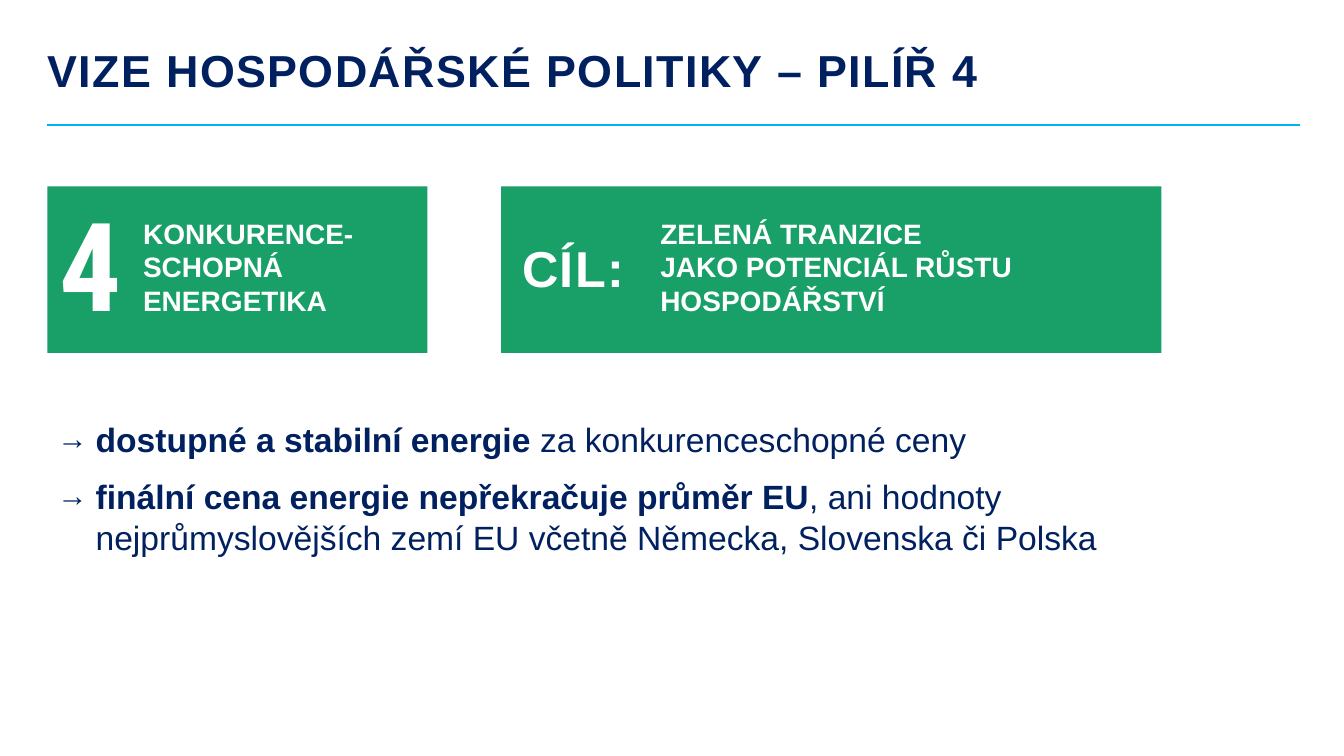
from lxml import etree
from pptx import Presentation
from pptx.dml.color import RGBColor
from pptx.enum.shapes import MSO_CONNECTOR, MSO_SHAPE
from pptx.enum.text import MSO_ANCHOR, MSO_AUTO_SIZE, PP_ALIGN
from pptx.oxml.ns import qn
from pptx.util import Inches, Pt

RECTANGLE, STRAIGHT = MSO_SHAPE.RECTANGLE, MSO_CONNECTOR.STRAIGHT
TOP, MIDDLE, LEFT = MSO_ANCHOR.TOP, MSO_ANCHOR.MIDDLE, PP_ALIGN.LEFT
GROW = MSO_AUTO_SIZE.SHAPE_TO_FIT_TEXT

COLORS = {"navy": "002060", "sky": "00B0F0", "green": "18A068", "white": "FFFFFF"}
WIDTH, HEIGHT = 13.33, 7.5
MARGIN = 0.47
PANEL_TOP, PANEL_HEIGHT = 1.85, 1.65

TITLE = {"size": 32, "color": "navy", "bold": True, "spacing": 1}
LABEL = {"size": 20, "color": "white", "bold": True}
BODY = {"size": 24, "color": "navy"}

PANELS = [
    {"left": MARGIN, "width": 3.77, "pad": 0.12, "mark_width": 0.73, "label_width": 2.75,
     "mark": "4", "mark_style": {"size": 88, "name": "Roboto Condensed"},
     "lines": ["KONKURENCE-", "SCHOPNÁ ENERGETIKA"]},
    {"left": 4.97, "width": 6.55, "pad": 0.21, "mark_width": 1.27, "label_width": 4.78,
     "mark": "CÍL:", "mark_style": {"size": 36},
     "lines": ["ZELENÁ TRANZICE ", "JAKO POTENCIÁL RŮSTU HOSPODÁŘSTVÍ"]},
]
POINTS = [
    ("dostupné a stabilní energie ", "za konkurenceschopné ceny"),
    ("finální cena energie nepřekračuje průměr EU",
     ", ani hodnoty nejprůmyslovějších zemí EU včetně Německa, Slovenska či Polska"),
]


def color(name):
    return RGBColor.from_string(COLORS[name])


def add_span(para, text, style):
    span = para.add_run()
    span.text = text
    values = {"name": style.get("name", "Arial"), "size": Pt(style["size"]),
              "bold": style.get("bold", False)}
    for key, value in values.items():
        setattr(span.font, key, value)
    span.font.color.rgb = color(style["color"])
    if "spacing" in style:
        span._r.get_or_add_rPr().set("spc", str(style["spacing"] * 100))


def set_frame(box, anchor=MIDDLE, inset=0.1, grow=False):
    frame = box.text_frame
    values = {"word_wrap": True, "vertical_anchor": anchor, "margin_left": Inches(inset)}
    if grow:
        values["auto_size"] = GROW
    for key, value in values.items():
        setattr(frame, key, value)
    frame.paragraphs[0].alignment = LEFT
    return frame


def add_block(shapes, place):
    block = shapes.add_shape(RECTANGLE, *map(Inches, place))
    block.shadow.inherit = False
    block.fill.solid()
    block.fill.fore_color.rgb = color("green")
    block.line.fill.background()
    return block


def add_heading(box, text, style):
    para = set_frame(box, inset=0).paragraphs[0]
    para.line_spacing = 0.9
    add_span(para, text, style)


def add_bullet(para):
    """Hanging navy arrow in front of the paragraph."""
    props = para._p.get_or_add_pPr()
    indent = Inches(0.38)
    props.set("marL", str(indent))
    props.set("indent", str(-indent))
    tint = etree.SubElement(props, qn("a:buClr"))
    etree.SubElement(tint, qn("a:srgbClr")).set("val", COLORS["navy"])
    for tag, key, value in (("a:buSzPct", "val", "90000"),
                            ("a:buFont", "typeface", "Arial"),
                            ("a:buChar", "char", "→")):
        etree.SubElement(props, qn(tag)).set(key, value)


def add_header(page, left, top, width):
    rule_top = Inches(top + 0.76)
    rule = page.shapes.add_connector(STRAIGHT, Inches(left), rule_top,
                                     Inches(left + width), rule_top)
    rule.line.color.rgb = color("sky")
    rule.line.width = Pt(1)
    etree.SubElement(rule._element.spPr, qn("a:effectLst"))
    title = page.shapes.add_textbox(*map(Inches, (left, top, 10.09, 0.48)))
    add_heading(title, "VIZE HOSPODÁŘSKÉ POLITIKY – PILÍŘ 4", TITLE)


def add_panel(page, panel, top, height):
    shapes = page.shapes.add_group_shape().shapes
    add_block(shapes, (panel["left"], top, panel["width"], height))

    # Large mark on the left
    mark_left = panel["left"] + panel["pad"]
    mark = add_block(shapes, (mark_left, top + 0.19, panel["mark_width"], 1.3))
    add_heading(mark, panel["mark"], {**TITLE, "color": "white", **panel["mark_style"]})

    # Label beside the mark
    label_left = mark_left + panel["mark_width"]
    label = add_block(shapes, (label_left, top + 0.24, panel["label_width"], 1.11))
    para = set_frame(label, grow=True).paragraphs[0]
    for number, line in enumerate(panel["lines"]):
        if number:
            para.add_line_break()
        add_span(para, line, LABEL)


def add_points(page, left, top, width, height):
    box = page.shapes.add_textbox(*map(Inches, (left, top, width, height)))
    frame = set_frame(box, anchor=TOP, grow=True)
    for number, (strong, plain) in enumerate(POINTS):
        para = frame.add_paragraph() if number else frame.paragraphs[0]
        para.space_after = Pt(12)
        add_bullet(para)
        add_span(para, strong, {**BODY, "bold": True})
        add_span(para, plain, BODY)


def main():
    deck = Presentation()
    deck.slide_width, deck.slide_height = Inches(WIDTH), Inches(HEIGHT)
    page = deck.slides.add_slide(deck.slide_layouts[6])
    add_header(page, MARGIN, 0.48, 12.42)
    for panel in PANELS:
        add_panel(page, panel, PANEL_TOP, PANEL_HEIGHT)
    add_points(page, MARGIN, 4.11, 11.05, 1.95)
    deck.save("out.pptx")


if __name__ == "__main__":
    main()
